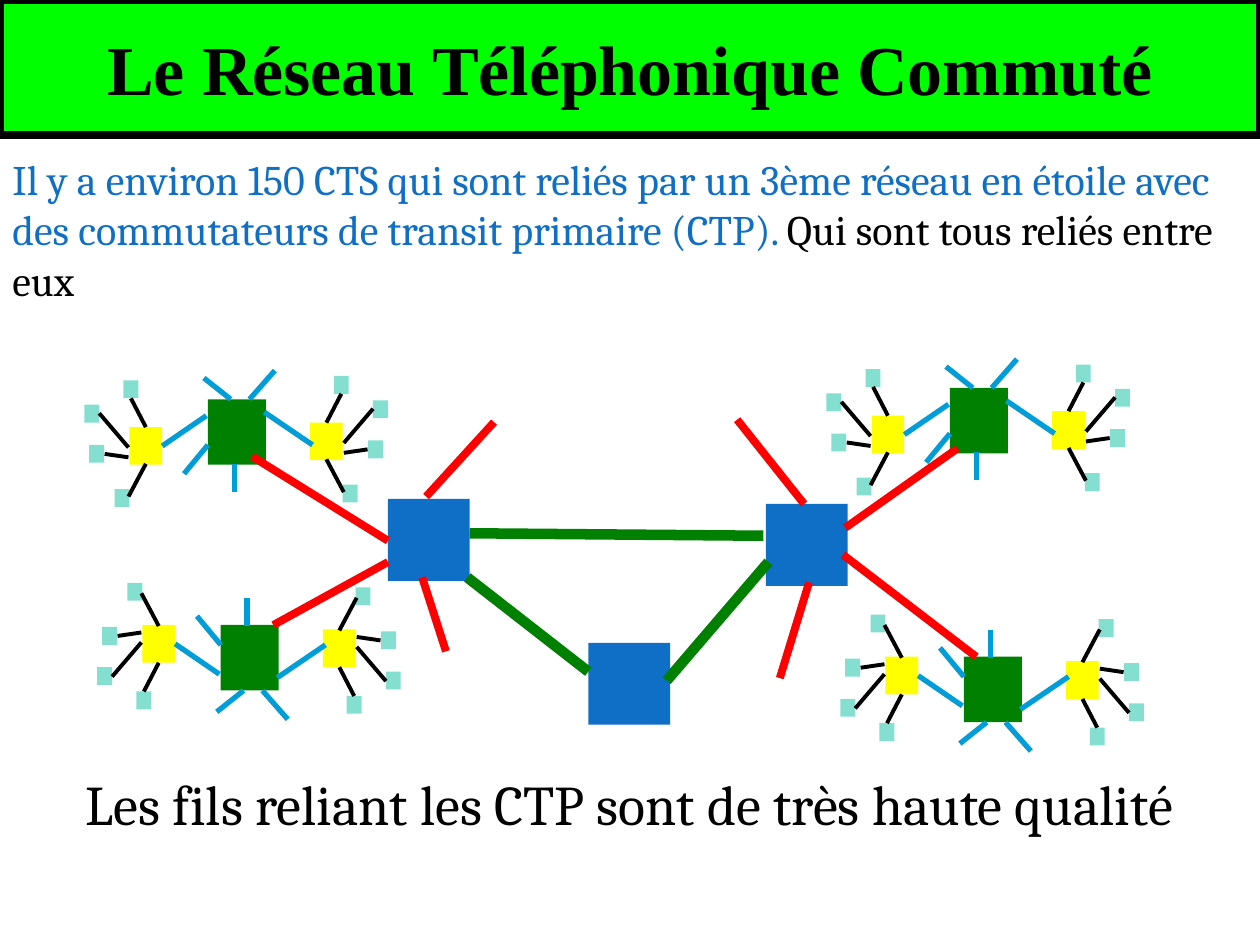
from lxml.etree import SubElement
from pptx import Presentation
from pptx.dml.color import RGBColor
from pptx.enum.shapes import MSO_CONNECTOR as Link, MSO_SHAPE as Shape
from pptx.enum.text import MSO_ANCHOR as Anchor, PP_ALIGN as Align
from pptx.oxml.ns import qn
from pptx.util import Cm, Pt

BLACK = RGBColor(0x00, 0x00, 0x00)
LIME = RGBColor(0x00, 0xFF, 0x00)
BLUE = RGBColor(0x0F, 0x6F, 0xC6)
SKY = RGBColor(0x00, 0x9D, 0xD9)
GREEN = RGBColor(0x00, 0x80, 0x00)
YELLOW = RGBColor(0xFF, 0xFF, 0x00)
AQUA = RGBColor(0x85, 0xDF, 0xD0)
RED = RGBColor(0xFF, 0x00, 0x00)

TITLE_FONT = {"name": "Times New Roman", "size": Pt(40), "bold": True}
INTRO_FONT = {"name": "Cambria", "size": Pt(24)}
CLOSING_FONT = {"name": "Cambria", "size": Pt(32)}

CLUSTER_WIDTH, CLUSTER_HEIGHT = 6.12, 2.77
RIGHT_WING_RISE = 0.09
PHONES = [(0, 0.69), (0.1, 1.5), (0.79, 0.2), (0.61, 2.39)]
PHONE_WIRES = [
    (0.94, 0.56, 1.24, 1.14),
    (0.3, 0.86, 0.89, 1.55),
    (0.41, 1.68, 0.89, 1.75),
    (1.24, 1.88, 0.89, 2.54),
]
LOCAL_WIRES = [
    (1.57, 1.52, 2.46, 0.91),
    (2.49, 1.5, 2.01, 2.08),
    (3.02, 1.88, 3.02, 2.44),
    (3.63, 0.84, 4.6, 1.5),
    (2.95, 0.58, 2.41, 0.15),
    (3.33, 0.58, 3.84, 0),
]
CLUSTERS = [
    (1.7, 7.47, False),
    (1.96, 11.73, True),
    (16.66, 7.24, False),
    (16.94, 12.37, True),
]

PRIMARY_SIZE = 1.65
PRIMARY_SWITCHES = [(2.74, 1.6), (6.78, 4.5), (10.36, 1.7)]
SECONDARY_WIRES = [
    (0, 0.74, 2.74, 2.44),
    (0.43, 4.14, 2.74, 2.87),
    (11.96, 2.18, 14.22, 0.58),
    (11.91, 2.72, 14.6, 4.78),
    (3.51, 1.55, 4.88, 0.05),
    (3.43, 3.18, 3.91, 4.67),
    (11.13, 1.7, 9.78, 0),
    (11.23, 3.28, 10.64, 5.21),
]
PRIMARY_WIRES = [
    (4.39, 2.29, 10.31, 2.34),
    (4.34, 3.18, 6.78, 5.08),
    (8.36, 5.26, 10.41, 2.87),
]


def apply_font(font, settings, color):
    """Set the font attributes and the colour."""
    for attribute, value in settings.items():
        setattr(font, attribute, value)
    font.color.rgb = color


def add_switch(slide, left, top, width, height, color):
    """Draw a plain filled box, in centimetres."""
    switch = slide.shapes.add_shape(
        Shape.RECTANGLE, Cm(left), Cm(top), Cm(width), Cm(height))
    switch.shadow.inherit = False
    switch.fill.solid()
    switch.fill.fore_color.rgb = color
    switch.line.fill.background()


def add_wire(slide, start, end, color, weight):
    """Draw a straight wire between two points, in centimetres."""
    wire = slide.shapes.add_connector(
        Link.STRAIGHT, *(Cm(length) for length in (*start, *end)))
    wire.line.color.rgb = color
    wire.line.width = Pt(weight)
    SubElement(wire._element.spPr, qn("a:effectLst"))


def add_title(slide, left, top, width, height):
    """Turn the title placeholder into the green banner."""
    title = slide.shapes.title
    title.left, title.top, title.width, title.height = map(
        Cm, (left, top, width, height))
    title.fill.solid()
    title.fill.fore_color.rgb = LIME
    title.line.color.rgb = BLACK
    title.line.width = Pt(4.5)
    title.text_frame.text = "Le Réseau Téléphonique Commuté"
    title.text_frame.vertical_anchor = Anchor.MIDDLE
    heading = title.text_frame.paragraphs[0]
    heading.alignment = Align.CENTER
    apply_font(heading.runs[0].font, TITLE_FONT, BLACK)


def add_statement(slide, left, top, width, height, parts, settings, alignment):
    """Write one paragraph made of (text, colour) parts."""
    frame = slide.shapes.add_textbox(
        Cm(left), Cm(top), Cm(width), Cm(height)).text_frame
    frame.word_wrap = True
    frame.vertical_anchor = Anchor.MIDDLE
    statement = frame.paragraphs[0]
    statement.alignment = alignment
    for text, color in parts:
        run = statement.add_run()
        run.text = text
        apply_font(run.font, settings, color)


def add_cluster(slide, left, top, upside_down):
    """Draw a secondary switch with its two wings of telephones."""

    def place(x, y, mirrored=False):
        rise = RIGHT_WING_RISE if mirrored else 0
        x = CLUSTER_WIDTH - x if mirrored else x
        y = y - rise
        return left + x, top + (CLUSTER_HEIGHT - y if upside_down else y)

    def box(x, y, width, height, color, mirrored=False):
        x1, y1 = place(x, y, mirrored)
        x2, y2 = place(x + width, y + height, mirrored)
        add_switch(slide, min(x1, x2), min(y1, y2), width, height, color)

    for mirrored in (False, True):
        for x, y in PHONES:
            box(x, y, 0.3, 0.36, AQUA, mirrored)
        box(0.91, 1.14, 0.66, 0.76, YELLOW, mirrored)
        for x1, y1, x2, y2 in PHONE_WIRES:
            add_wire(slide, place(x1, y1, mirrored), place(x2, y2, mirrored),
                     BLACK, 2.25)
    box(2.49, 0.58, 1.17, 1.32, GREEN)
    for x1, y1, x2, y2 in LOCAL_WIRES:
        add_wire(slide, place(x1, y1), place(x2, y2), SKY, 3)


def add_backbone(slide, left, top):
    """Draw the primary switches and the wires that join them."""
    for x, y in PRIMARY_SWITCHES:
        add_switch(slide, left + x, top + y, PRIMARY_SIZE, PRIMARY_SIZE, BLUE)
    for wires, color, weight in (
            (SECONDARY_WIRES, RED, 4.5), (PRIMARY_WIRES, GREEN, 6)):
        for x1, y1, x2, y2 in wires:
            add_wire(slide, (left + x1, top + y1), (left + x2, top + y2),
                     color, weight)


def main():
    """Build the slide and save it."""
    deck = Presentation()
    deck.slide_width, deck.slide_height = Cm(25.4), Cm(19.05)
    slide = deck.slides.add_slide(deck.slide_layouts.get_by_name("Title Only"))
    add_title(slide, 0, 0, 25.4, 2.72)
    add_statement(slide, 0, 2.95, 25.4, 3.33, [
        ("Il y a environ 150 CTS qui sont reliés par un 3ème réseau en étoile "
         "avec des commutateurs de transit primaire (CTP). ", BLUE),
        ("Qui sont tous reliés entre eux", BLACK),
    ], INTRO_FONT, Align.LEFT)
    for left, top, upside_down in CLUSTERS:
        add_cluster(slide, left, top, upside_down)
    add_backbone(slide, 5.08, 8.46)
    add_statement(slide, 0, 15.37, 25.4, 1.63, [
        ("Les fils reliant les CTP sont de très haute qualité", BLACK),
    ], CLOSING_FONT, Align.CENTER)
    deck.save("out.pptx")


if __name__ == "__main__":
    main()
